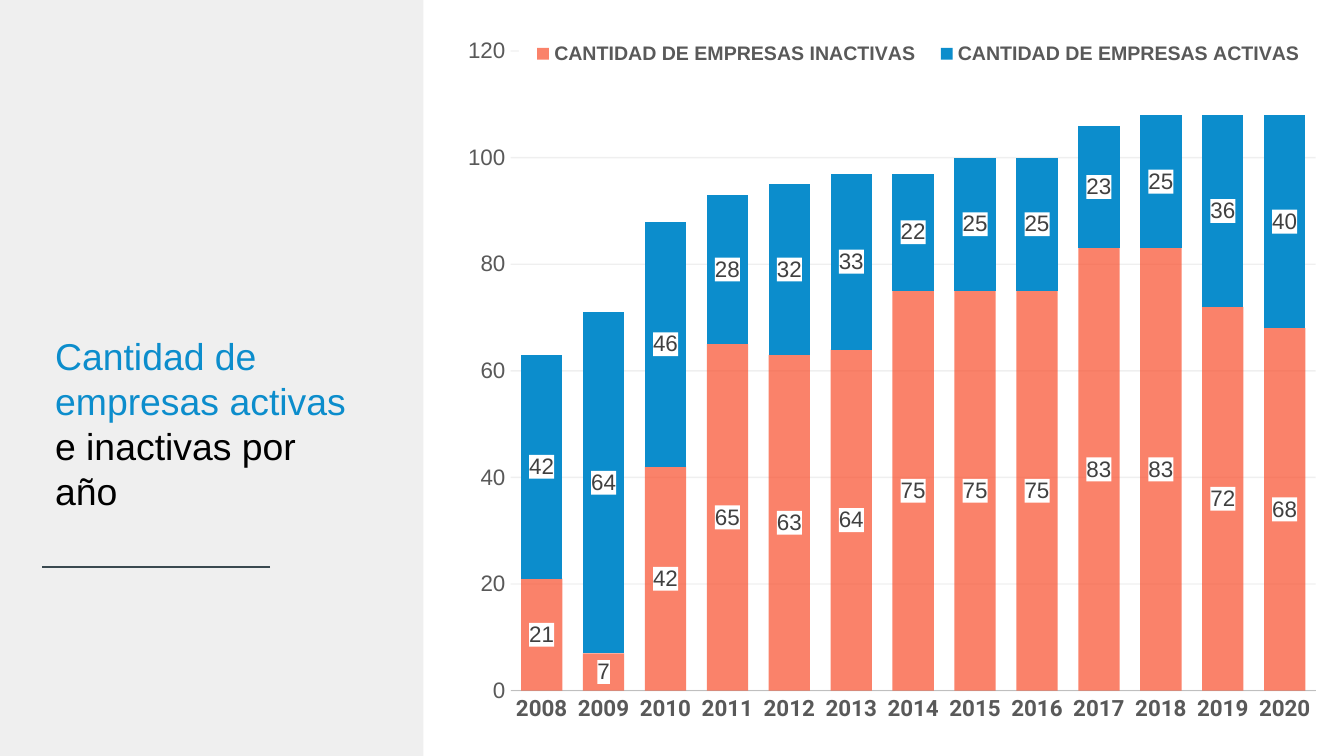
from dataclasses import dataclass

from lxml import etree
from pptx import Presentation
from pptx.chart.data import CategoryChartData
from pptx.dml.color import RGBColor
from pptx.enum.chart import XL_CHART_TYPE, XL_LABEL_POSITION, XL_LEGEND_POSITION, XL_TICK_MARK
from pptx.enum.shapes import MSO_CONNECTOR, MSO_SHAPE
from pptx.enum.text import MSO_ANCHOR, MSO_AUTO_SIZE, PP_ALIGN
from pptx.oxml import parse_xml
from pptx.oxml.ns import nsdecls, qn
from pptx.util import Inches, Pt

STACKED = XL_CHART_TYPE.COLUMN_STACKED
CENTER = XL_LABEL_POSITION.CENTER
LEGEND_BOTTOM = XL_LEGEND_POSITION.BOTTOM
NO_TICK = XL_TICK_MARK.NONE
STRAIGHT = MSO_CONNECTOR.STRAIGHT
RECTANGLE = MSO_SHAPE.RECTANGLE
TOP = MSO_ANCHOR.TOP
NO_AUTOFIT = MSO_AUTO_SIZE.NONE
LEFT = PP_ALIGN.LEFT

TITLE_ONLY = 5
PAGE_WIDTH = Inches(10)
PAGE_HEIGHT = PAGE_WIDTH * 9 // 16
CHART_WIDTH, CHART_HEIGHT = 6.58, 5.62

COLORS = {
    "panel": "EFEFEF", "blue": "0C8DCC", "coral": "F94D2B", "black": "000000",
    "rule": "3A4950", "axis_text": "595959", "label_text": "404040",
    "axis_line": "BFBFBF", "grid": "D9D9D9", "white": "FFFFFF",
}
YEARS = [str(year) for year in range(2008, 2021)]


@dataclass
class Series:
    name: str
    values: list[int]
    color: str
    opacity: int = 100


@dataclass
class Area:
    """A part of the chart, in inches from the chart's top left corner."""
    left: float
    top: float
    width: float
    height: float


SERIES = [
    Series("CANTIDAD DE EMPRESAS INACTIVAS",
           [21, 7, 42, 65, 63, 64, 75, 75, 75, 83, 83, 72, 68], "coral", 70),
    Series("CANTIDAD DE EMPRESAS ACTIVAS",
           [42, 64, 46, 28, 32, 33, 22, 25, 25, 23, 25, 36, 40], "blue"),
]
PLOT_AREA = Area(0.45, 0.2, 5.99, 4.76)
LEGEND_AREA = Area(0.51, 0.08, 5.95, 0.28)


def rgb(name: str) -> RGBColor:
    return RGBColor.from_string(COLORS[name])


def paint(fill, color: str, opacity: int = 100) -> None:
    fill.solid()
    fill.fore_color.rgb = rgb(color)
    if opacity < 100:
        solid = fill._xPr.find(qn("a:solidFill"))
        etree.SubElement(solid[0], qn("a:alpha"), val=str(opacity * 1000))


def format_font(font, size: float, color: str, bold: bool = False, name: str = "Arial") -> None:
    font.name, font.size, font.bold = name, Pt(size), bold
    font.color.rgb = rgb(color)


def add_span(para, text: str, *, size: float, color: str) -> None:
    span = para.add_run()
    span.text = text
    format_font(span.font, size, color)


def manual_layout(area: Area, target: str = ""):
    return parse_xml(
        f'<c:layout {nsdecls("c")}><c:manualLayout>{target}'
        '<c:xMode val="edge"/><c:yMode val="edge"/>'
        f'<c:x val="{area.left / CHART_WIDTH}"/><c:y val="{area.top / CHART_HEIGHT}"/>'
        f'<c:w val="{area.width / CHART_WIDTH}"/><c:h val="{area.height / CHART_HEIGHT}"/>'
        '</c:manualLayout></c:layout>')


def remove_layout(element) -> None:
    for layout in element.findall(qn("c:layout")):
        element.remove(layout)


def add_white_box(element) -> None:
    """Give a legend or a set of data labels a white background."""
    box = parse_xml(
        f'<c:spPr {nsdecls("c", "a")}><a:solidFill><a:srgbClr val="{COLORS["white"]}"/>'
        '</a:solidFill><a:ln><a:noFill/></a:ln></c:spPr>')
    element.find(qn("c:txPr")).addprevious(box)


def add_panel(page) -> None:
    panel = page.shapes.add_shape(RECTANGLE, 0, 0, Inches(3.15), PAGE_HEIGHT)
    panel.shadow.inherit = False
    paint(panel.fill, "panel")
    panel.line.fill.background()
    page.shapes._spTree.insert(2, panel._element)  # behind the title


def add_title(page) -> None:
    title = page.shapes.title
    title.left, title.top = Inches(0.31), Inches(2.43)
    title.width, title.height = Inches(2.45), Inches(1.45)
    frame = title.text_frame
    frame.word_wrap = True
    frame.auto_size = NO_AUTOFIT
    frame.vertical_anchor = TOP
    para = frame.paragraphs[0]
    para.alignment = LEFT
    para.line_spacing = 1.0
    add_span(para, "Cantidad de empresas activas ", size=20, color="blue")
    add_span(para, "e inactivas por año", size=20, color="black")


def add_rule(page) -> None:
    rule = page.shapes.add_connector(
        STRAIGHT, Inches(2.01), Inches(4.22), Inches(0.31), Inches(4.22))
    rule.line.color.rgb = rgb("rule")
    rule.line.width = Pt(0.75)
    etree.SubElement(rule._element.spPr, qn("a:effectLst"))


def format_axes(chart) -> None:
    years, amounts = chart.category_axis, chart.value_axis
    for axis in (years, amounts):
        axis.major_tick_mark = axis.minor_tick_mark = NO_TICK
    format_font(years.tick_labels.font, 12, "axis_text", bold=True, name="Roboto")
    format_font(amounts.tick_labels.font, 12, "axis_text")
    years.format.line.color.rgb = rgb("axis_line")
    years.format.line.width = Pt(0.75)
    amounts.format.line.fill.background()
    amounts.minimum_scale, amounts.maximum_scale, amounts.major_unit = 0, 120, 20
    grid = amounts.major_gridlines.format.line
    grid.width = Pt(0.75)
    paint(grid.fill, "grid", 40)


def format_series(columns, series: Series) -> None:
    paint(columns.format.fill, series.color, series.opacity)
    columns.invert_if_negative = False
    labels = columns.data_labels
    labels.show_value = True
    labels.position = CENTER
    format_font(labels.font, 12, "label_text")
    add_white_box(labels._element)


def format_legend(chart) -> None:
    chart.has_legend = True
    legend = chart.legend
    legend.position = LEGEND_BOTTOM
    legend.include_in_layout = True
    format_font(legend.font, 10.5, "axis_text", bold=True)
    element = legend._element
    remove_layout(element)
    element.find(qn("c:legendPos")).addnext(manual_layout(LEGEND_AREA))
    add_white_box(element)


def add_company_chart(page) -> None:
    data = CategoryChartData()
    data.categories = YEARS
    for series in SERIES:
        data.add_series(series.name, series.values)
    chart = page.shapes.add_chart(
        STACKED, Inches(3.35), Inches(0.18),
        Inches(CHART_WIDTH), Inches(CHART_HEIGHT), data).chart
    chart.has_title = False
    format_font(chart.font, 10, "black")
    plot = chart.plots[0]
    plot.gap_width, plot.overlap = 50, 100
    plot.vary_by_categories = False
    for columns, series in zip(plot.series, SERIES):
        format_series(columns, series)
    format_axes(chart)
    format_legend(chart)
    plot_area = chart._chartSpace.chart.plotArea
    remove_layout(plot_area)
    plot_area.insert(0, manual_layout(PLOT_AREA, '<c:layoutTarget val="inner"/>'))


def main() -> None:
    deck = Presentation()
    deck.slide_width, deck.slide_height = PAGE_WIDTH, PAGE_HEIGHT
    page = deck.slides.add_slide(deck.slide_layouts[TITLE_ONLY])
    add_panel(page)
    add_title(page)
    add_rule(page)
    add_company_chart(page)
    deck.save("out.pptx")


if __name__ == "__main__":
    main()
